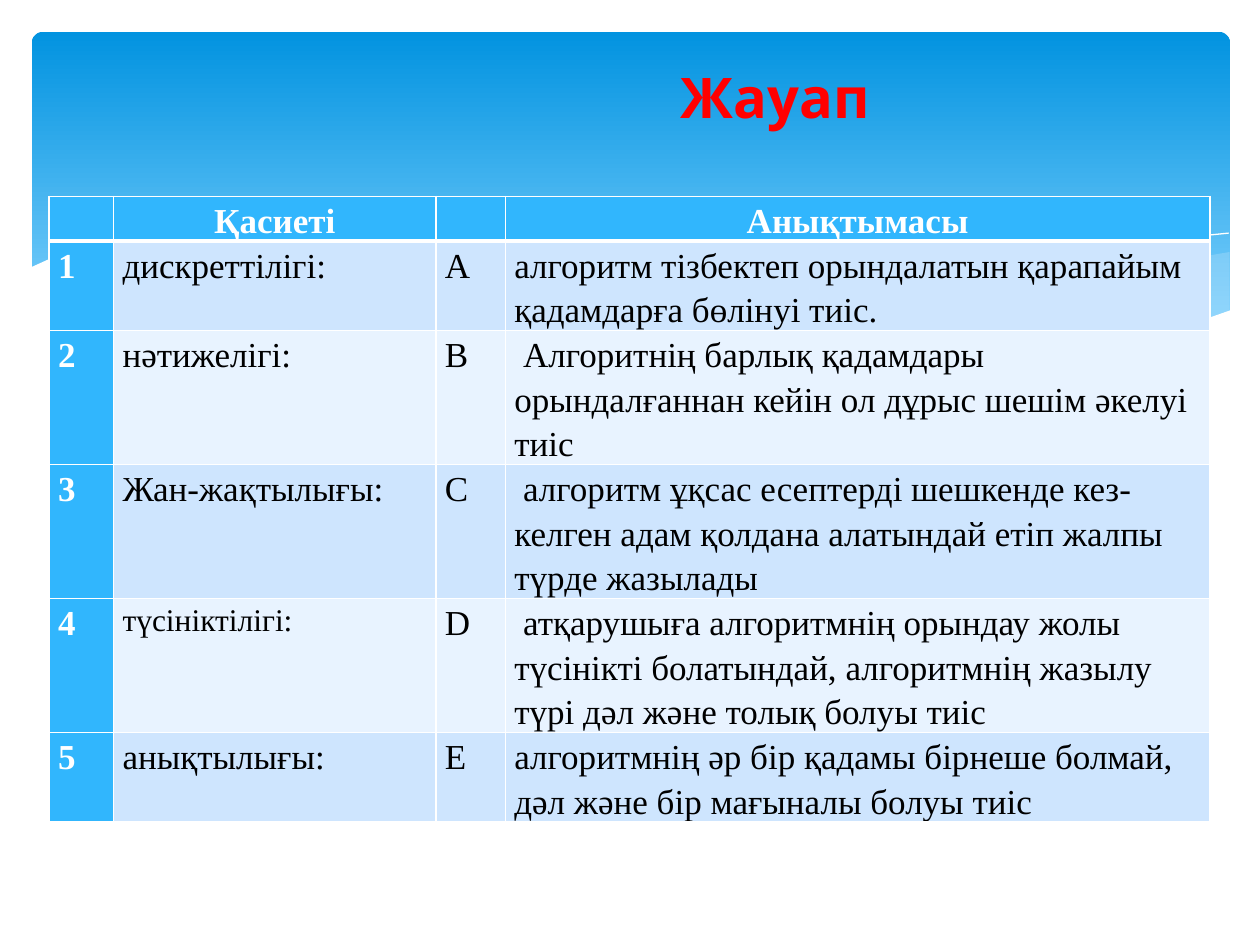
"""Build the answer slide: a wave banner, a title and a table of algorithm properties."""
from dataclasses import dataclass

from lxml import etree
from pptx import Presentation
from pptx.dml.color import RGBColor
from pptx.enum.shapes import MSO_SHAPE
from pptx.enum.text import MSO_ANCHOR, PP_ALIGN
from pptx.oxml.ns import qn
from pptx.util import Cm, Pt

ROUND = MSO_SHAPE.ROUNDED_RECTANGLE
MIDDLE = MSO_ANCHOR.MIDDLE
CENTER = PP_ALIGN.CENTER
LEFT = PP_ALIGN.LEFT


@dataclass(frozen=True)
class Theme:
    """Colours, fonts and sizes."""
    sky: str = "0293E0"
    pale: str = "83D3FE"
    mist: str = "C6E7FC"
    white: str = "FFFFFF"
    black: str = "000000"
    red: str = "FF0000"
    head: str = "31B6FD"
    bands: tuple = ("CEE5FE", "E8F3FF")
    title: str = "Cabin"
    body: str = "Times New Roman"
    big: int = 32
    text: int = 20
    small: int = 18
    thin: int = 1
    thick: int = 3


@dataclass(frozen=True)
class Wave:
    """An outline in centimetres, filled when it has an opacity."""
    points: tuple
    color: str
    alpha: int = 0


@dataclass(frozen=True)
class Trait:
    """One table row: property, letter and meaning."""
    name: str
    mark: str
    sense: str
    size: int


THEME = Theme()
WAVES = (
    Wave(((24.79, 5.08), (23.75, 5.26), (21.87, 5.66), (19.79, 6.15), (16.79, 6.73),
          (18.26, 6.91), (19.53, 7.04), (20.68, 7.06), (21.92, 6.99), (22.99, 6.83),
          (23.93, 6.58), (24.79, 6.27)), THEME.mist, 29),
    Wave(((22.68, 6.93), (21.26, 6.73), (18.82, 6.27), (15.98, 5.64), (14.1, 5.21),
          (12.42, 4.93), (10.67, 4.75), (9.17, 4.7), (7.26, 4.85), (9.19, 5.16),
          (11.4, 5.64), (14.38, 6.3), (16.51, 6.71), (18.34, 6.96), (19.94, 7.06),
          (21.29, 7.06)), THEME.mist, 40),
    Wave(((7.85, 4.95), (8.74, 4.83), (10.19, 4.75), (11.91, 4.8), (14.12, 5),
          (16.89, 5.41), (19.3, 5.92), (21.11, 6.38), (23.04, 6.91)), THEME.white),
    Wave(((15.57, 6.53), (17.65, 5.97), (19.71, 5.49), (22, 5.05), (23.47, 4.83),
          (24.77, 4.7)), THEME.white),
    Wave(((24.82, 6.25), (23.88, 6.58), (22.83, 6.83), (21.59, 6.99), (20.55, 7.04),
          (18.9, 6.96), (16.97, 6.73), (14.71, 6.35), (11.35, 5.59), (9.27, 5.13),
          (7.42, 4.83), (5.84, 4.7), (4.5, 4.67), (3.02, 4.75), (1.93, 4.95),
          (1.02, 5.21), (0.58, 5.41), (0.58, 8.36), (24.82, 8.36)), THEME.white, 100),
)
HEADS = ("", "Қасиеті", "", "Анықтымасы")
TRAITS = (
    Trait("дискреттілігі:", "A",
          "алгоритм тізбектеп орындалатын қарапайым қадамдарға бөлінуі тиіс.", THEME.text),
    Trait("нәтижелігі:", "B",
          " Алгоритнің барлық қадамдары орындалғаннан кейін ол дұрыс шешім әкелуі тиіс",
          THEME.text),
    Trait("Жан-жақтылығы:", "C",
          " алгоритм ұқсас есептерді шешкенде кез-келген адам қолдана алатындай етіп "
          "жалпы түрде жазылады", THEME.text),
    Trait("түсініктілігі:", "D",
          " атқарушыға алгоритмнің орындау жолы түсінікті болатындай, алгоритмнің "
          "жазылу түрі дәл және толық болуы тиіс", THEME.small),
    Trait("анықтылығы:", "E",
          "алгоритмнің әр бір қадамы бірнеше болмай, дәл және бір мағыналы болуы тиіс",
          THEME.text),
)
COLS = (1.3, 6.5, 1.4, 14.2)
ROWS = (0.79, 0.79, 2.11, 1.27, 1.55, 1.35)


def add_run(para, text: str, font: str, size: int, color: str, bold: bool) -> None:
    """Add one styled run."""
    run = para.add_run()
    run.text = text
    run.font.name = font
    run.font.size = Pt(size)
    run.font.bold = bold
    run.font.color.rgb = RGBColor.from_string(color)


def draw_panel(slide) -> None:
    """Draw the gradient banner."""
    panel = slide.shapes.add_shape(ROUND, Cm(0.64), Cm(0.64), Cm(24.16), Cm(6.86))
    panel.adjustments[0] = 0.034
    panel.shadow.inherit = False
    panel.line.fill.background()
    panel.fill.gradient()
    panel.fill.gradient_angle = 270
    for stop, color, place in zip(panel.fill.gradient_stops, (THEME.sky, THEME.pale), (0, 0.9)):
        stop.color.rgb = RGBColor.from_string(color)
        stop.position = place


def draw_wave(slide, wave: Wave) -> None:
    """Draw a filled wave or an open wave line."""
    first, *rest = [(round(x * 100), round(y * 100)) for x, y in wave.points]
    pen = slide.shapes.build_freeform(*first, scale=Cm(0.01))
    pen.add_line_segments(rest, close=wave.alpha > 0)
    shape = pen.convert_to_shape()
    shape.shadow.inherit = False
    color = RGBColor.from_string(wave.color)
    if wave.alpha:
        shape.line.fill.background()
        shape.fill.solid()
        shape.fill.fore_color.rgb = color
        tint = shape.element.spPr.find(qn("a:solidFill"))[0]
        etree.SubElement(tint, qn("a:alpha"), val=str(wave.alpha * 1000))
    else:
        shape.fill.background()
        shape.line.color.rgb = color
        shape.line.width = Pt(0)


def draw_title(slide) -> None:
    """Draw the title."""
    frame = slide.shapes.add_textbox(Cm(6.7), Cm(0.74), Cm(17.86), Cm(2.41)).text_frame
    frame.word_wrap = True
    frame.vertical_anchor = MIDDLE
    para = frame.paragraphs[0]
    para.alignment = CENTER
    add_run(para, "Жауап", THEME.title, THEME.big, THEME.red, True)


def set_edges(cell, top: int, base: int) -> None:
    """Give a cell its white borders."""
    props = cell._tc.get_or_add_tcPr()
    sides = {"lnL": THEME.thin, "lnR": THEME.thin, "lnT": top, "lnB": base}
    for side, width in sides.items():
        line = etree.SubElement(props, qn(f"a:{side}"), w=str(Pt(width)))
        fill = etree.SubElement(line, qn("a:solidFill"))
        etree.SubElement(fill, qn("a:srgbClr"), val=THEME.white)


def fill_cell(cell, text: str, row: int, col: int, size: int) -> None:
    """Style one cell and write its text."""
    key = row == 0 or col == 0
    set_edges(cell, THEME.thick if row == 1 else THEME.thin,
              THEME.thick if row == 0 else THEME.thin)
    cell.fill.solid()
    cell.fill.fore_color.rgb = RGBColor.from_string(
        THEME.head if key else THEME.bands[(row - 1) % 2])
    cell.margin_left = cell.margin_right = Cm(0.18)
    cell.margin_top = cell.margin_bottom = Cm(0)
    para = cell.text_frame.paragraphs[0]
    para.alignment = LEFT if row else CENTER
    para.line_spacing = 1.15
    if text:
        add_run(para, text, THEME.body, size, THEME.white if key else THEME.black, key)


def draw_table(slide) -> None:
    """Draw the table of properties."""
    frame = slide.shapes.add_table(len(ROWS), len(COLS), Cm(0.99), Cm(3.96), Cm(23.4), Cm(13.16))
    table = frame.table
    for col, width in zip(table.columns, COLS):
        col.width = Cm(width)
    for row, height in zip(table.rows, ROWS):
        row.height = Cm(height)
    frame.height = Cm(13.16)
    for col, text in enumerate(HEADS):
        fill_cell(table.cell(0, col), text, 0, col, THEME.text)
    for row, trait in enumerate(TRAITS, 1):
        for col, text in enumerate((str(row), trait.name, trait.mark, trait.sense)):
            size = trait.size if col == 1 else THEME.text
            fill_cell(table.cell(row, col), text, row, col, size)


def main() -> None:
    """Build and save the slide."""
    deck = Presentation()
    deck.slide_width, deck.slide_height = Cm(25.4), Cm(19.05)
    slide = deck.slides.add_slide(deck.slide_layouts[6])
    draw_panel(slide)
    for wave in WAVES:
        draw_wave(slide, wave)
    draw_table(slide)
    draw_title(slide)
    deck.save("out.pptx")


if __name__ == "__main__":
    main()
